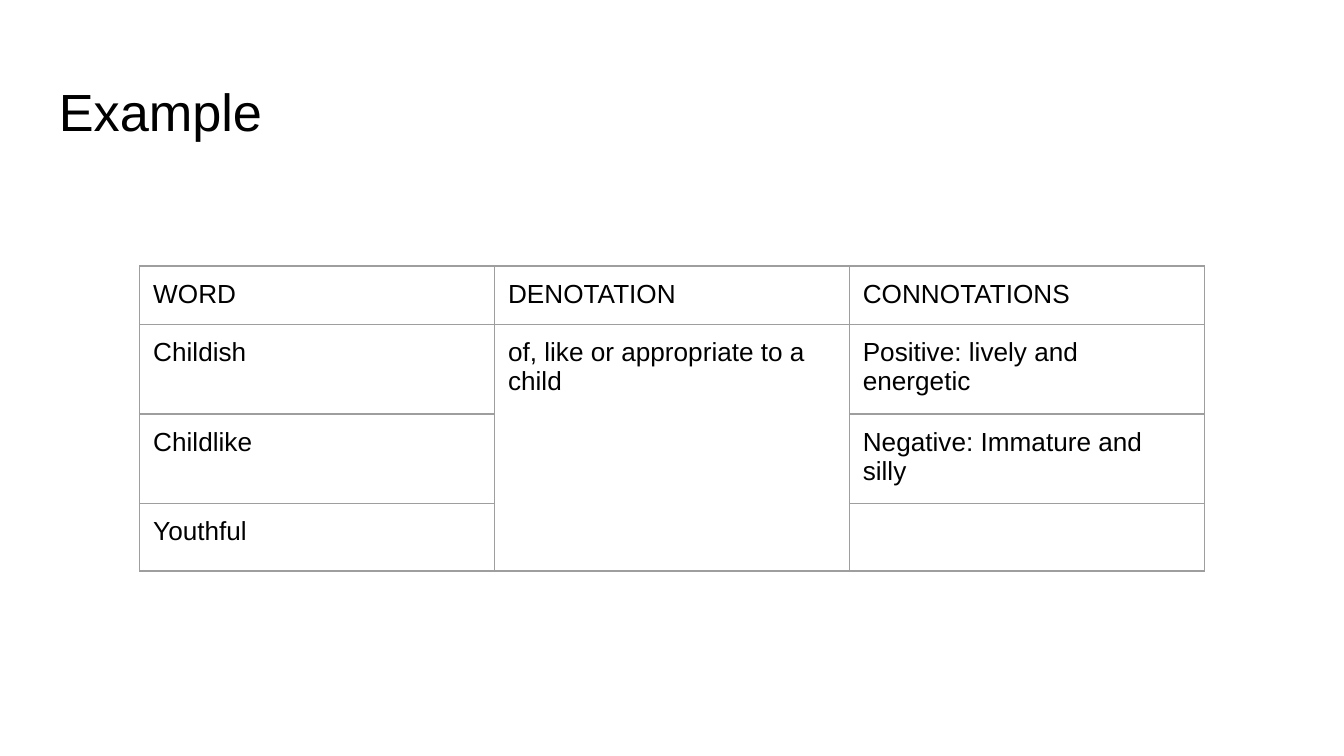
import lxml.etree
import pptx
import pptx.dml.color
import pptx.enum.text
import pptx.oxml.ns
import pptx.util

BLACK = pptx.dml.color.RGBColor(0x00, 0x00, 0x00)
WHITE = pptx.dml.color.RGBColor(0xFF, 0xFF, 0xFF)
GREY = pptx.dml.color.RGBColor(0x9E, 0x9E, 0x9E)
FONT = "Arial"
INSET = pptx.util.Inches(0.1)
BORDER_WIDTH = pptx.util.Pt(0.75)
SLIDE_WIDTH = pptx.util.Inches(10)
SLIDE_HEIGHT = SLIDE_WIDTH * 9 // 16

ROWS = [
    ["WORD", "DENOTATION", "CONNOTATIONS"],
    ["Childish", "of, like or appropriate to a child", "Positive: lively and energetic"],
    ["Childlike", "", "Negative: Immature and silly"],
    ["Youthful", "", ""],
]
ROW_HEIGHT = 0.42


def box(left, top, width, height):
    return [pptx.util.Inches(length) for length in (left, top, width, height)]


def add_text(paragraph, text, size):
    run = paragraph.add_run()
    run.text = text
    run.font.name = FONT
    run.font.size = pptx.util.Pt(size)
    run.font.bold = False
    run.font.color.rgb = BLACK


def set_insets(holder):
    holder.margin_left = holder.margin_right = INSET
    holder.margin_top = holder.margin_bottom = INSET


def add_title(slide, area, text):
    frame = slide.shapes.add_textbox(*area).text_frame
    frame.word_wrap = True
    frame.vertical_anchor = pptx.enum.text.MSO_ANCHOR.TOP
    set_insets(frame)
    add_text(frame.paragraphs[0], text, 28)


def set_borders(cell):
    qn = pptx.oxml.ns.qn
    properties = cell._tc.get_or_add_tcPr()
    for side in ("a:lnL", "a:lnR", "a:lnT", "a:lnB"):
        line = lxml.etree.SubElement(properties, qn(side), w=str(BORDER_WIDTH))
        fill = lxml.etree.SubElement(line, qn("a:solidFill"))
        lxml.etree.SubElement(fill, qn("a:srgbClr"), val=str(GREY))


def add_word_table(slide, area):
    """Place the table; rows grow to fit wrapped text."""
    table = slide.shapes.add_table(len(ROWS), len(ROWS[0]), *area).table
    table.first_row = False
    table.horz_banding = False
    for row, texts in zip(table.rows, ROWS):
        for cell, text in zip(row.cells, texts):
            set_insets(cell)
            set_borders(cell)
            cell.fill.background()
            if text:
                add_text(cell.text_frame.paragraphs[0], text, 14)
    table.cell(1, 1).merge(table.cell(3, 1))


def main():
    presentation = pptx.Presentation()
    presentation.slide_width = SLIDE_WIDTH
    presentation.slide_height = SLIDE_HEIGHT
    slide = presentation.slides.add_slide(presentation.slide_layouts[6])
    slide.background.fill.solid()
    slide.background.fill.fore_color.rgb = WHITE
    add_title(slide, box(0.34, 0.49, 9.32, 0.63), "Example")
    add_word_table(slide, box(1.04, 1.98, 7.92, ROW_HEIGHT * len(ROWS)))
    presentation.save("out.pptx")


if __name__ == "__main__":
    main()
